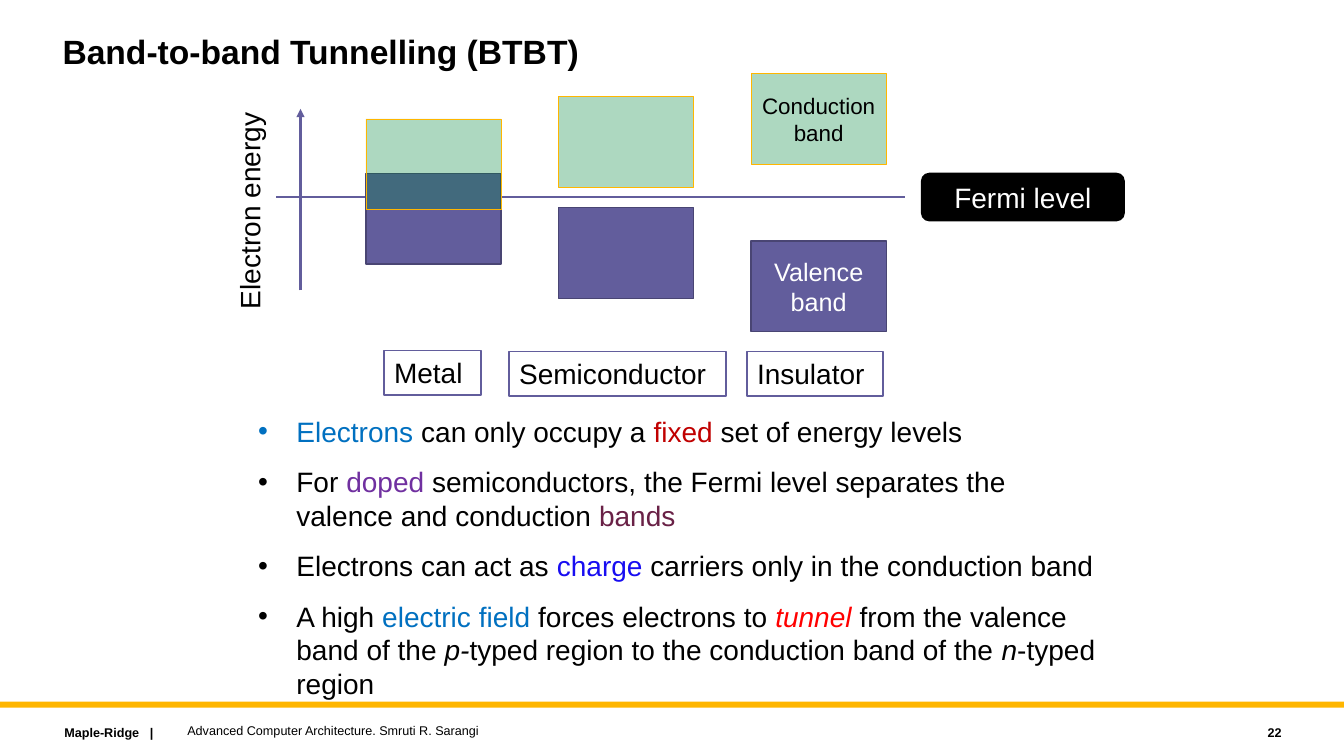
"""Build the slide on band-to-band tunnelling."""
import dataclasses

import pptx
import pptx.dml.color
import pptx.enum.shapes
import pptx.enum.text
import pptx.oxml
import pptx.oxml.ns
import pptx.util

Inches = pptx.util.Inches
Pt = pptx.util.Pt
Shape = pptx.enum.shapes.MSO_SHAPE
Align = pptx.enum.text.PP_ALIGN
Anchor = pptx.enum.text.MSO_ANCHOR
Fit = pptx.enum.text.MSO_AUTO_SIZE


@dataclasses.dataclass(frozen=True)
class Theme:
    font: str = "Arial"
    black: str = "000000"
    white: str = "FFFFFF"
    gold: str = "FFB600"
    violet: str = "625D9C"
    edge: str = "494573"
    green: str = "00863D"
    blue: str = "0070C0"
    crimson: str = "C00000"
    purple: str = "7030A0"
    plum: str = "692146"
    royal: str = "180DF1"
    red: str = "FF0000"
    head: int = 24
    main: int = 20
    band: int = 18
    small: int = 16
    foot: int = 9


def color(code):
    return pptx.dml.color.RGBColor.from_string(code)


def node(tag, **attrs):
    item = pptx.oxml.parse_xml(f"<a:{tag} {pptx.oxml.ns.nsdecls('a')}/>")
    for key, value in attrs.items():
        item.set(key, value)
    return item


class Deck:
    def __init__(self, theme):
        self.theme = theme
        self.file = pptx.Presentation()
        self.file.slide_width = Inches(13.33)
        self.file.slide_height = Inches(7.5)
        self.slide = self.file.slides.add_slide(self.file.slide_layouts[1])

    def place(self, item, area):
        item.left, item.top, item.width, item.height = map(Inches, area)

    def style(self, run, size, tint=None, bold=False, slant=False):
        font = run.font
        font.name, font.size = self.theme.font, Pt(size)
        font.bold, font.italic = bold, slant
        font.color.rgb = color(tint or self.theme.black)

    def letter(self, item, text, size, tint=None, bold=False, align=Align.LEFT,
               anchor=Anchor.TOP, wrap=True, fit=Fit.NONE):
        frame = item.text_frame
        frame.text = text
        frame.word_wrap, frame.auto_size = wrap, fit
        frame.vertical_anchor = anchor
        for para in frame.paragraphs:
            para.alignment = align
            for run in para.runs:
                self.style(run, size, tint, bold)

    def title(self, text, area):
        item = self.slide.shapes.title
        self.place(item, area)
        self.letter(item, text, self.theme.head, bold=True)
        item.text_frame.paragraphs[0].line_spacing = 0.9

    def bullets(self, rows, area):
        item = self.slide.placeholders[1]
        self.place(item, area)
        frame = item.text_frame
        frame.word_wrap, frame.auto_size = True, Fit.NONE
        frame.vertical_anchor = Anchor.TOP
        for index, row in enumerate(rows):
            para = frame.add_paragraph() if index else frame.paragraphs[0]
            props = para._p.get_or_add_pPr()
            props.set("marL", str(Inches(0.38)))
            props.set("indent", str(-Inches(0.38)))
            props.append(node("buFont", typeface=self.theme.font))
            props.append(node("buChar", char="•"))
            para.space_before = Pt(12 if index else 0)
            for text, tint, slant in row:
                run = para.add_run()
                run.text = text
                self.style(run, self.theme.main, tint, slant=slant)

    def label(self, text, area, size, turn=0, **look):
        item = self.slide.shapes.add_textbox(*map(Inches, area))
        self.letter(item, text, size, **look)
        item.rotation = turn

    def box(self, area, fill, edge=None, width=1, kind=Shape.RECTANGLE, alpha=None):
        item = self.slide.shapes.add_shape(kind, *map(Inches, area))
        item.shadow.inherit = False
        item.fill.solid()
        item.fill.fore_color.rgb = color(fill)
        if alpha:
            tone = item._element.spPr.find(".//" + pptx.oxml.ns.qn("a:srgbClr"))
            tone.append(node("alpha", val=str(alpha * 1000)))
        if edge:
            item.line.color.rgb = color(edge)
            item.line.width = Pt(width)
        else:
            item.line.fill.background()
        return item

    def line(self, start, end, arrow=False):
        ends = map(Inches, (*start, *end))
        item = self.slide.shapes.add_connector(
            pptx.enum.shapes.MSO_CONNECTOR.STRAIGHT, *ends)
        item.line.color.rgb = color(self.theme.violet)
        item.line.width = Pt(1.5)
        if arrow:
            stroke = item._element.spPr.find(pptx.oxml.ns.qn("a:ln"))
            stroke.append(node("tailEnd", type="triangle"))
        item._element.spPr.append(node("effectLst"))


def main():
    theme = Theme()
    deck = Deck(theme)

    deck.title("Band-to-band Tunnelling (BTBT)", (0.52, 0.3, 10, 0.9))
    plain = theme.black
    deck.bullets([
        [("Electrons", theme.blue, False), (" can only occupy a ", plain, False),
         ("fixed", theme.crimson, False), (" set of energy levels", plain, False)],
        [("For ", plain, False), ("doped", theme.purple, False),
         (" semiconductors, the Fermi level separates the valence and conduction ",
          plain, False), ("bands", theme.plum, False)],
        [("Electrons can act as ", plain, False), ("charge", theme.royal, False),
         (" carriers only in the conduction band", plain, False)],
        [("A high ", plain, False), ("electric field ", theme.blue, False),
         ("forces electrons to ", plain, False), ("tunnel ", theme.red, True),
         ("from the valence band of the ", plain, False), ("p-", plain, True),
         ("typed region to the conduction band of the ", plain, False),
         ("n", plain, True), ("-typed region", plain, False)],
    ], (2.46, 4.06, 8.51, 2.92))

    deck.box((0, 6.96, 13.33, 0.06), theme.gold)
    deck.label("Maple-Ridge   |", (0.54, 7.14, 2.27, 0.25), theme.foot, bold=True)
    deck.label("Advanced Computer Architecture. Smruti R. Sarangi",
               (1.76, 7.12, 8, 0.25), theme.foot, anchor=Anchor.MIDDLE)
    deck.label("22", (11.41, 7.14, 1.4, 0.25), theme.foot, bold=True,
               align=Align.RIGHT, anchor=Anchor.MIDDLE)

    deck.line((2.98, 2.88), (2.98, 1.08), arrow=True)
    deck.line((2.74, 1.95), (8.98, 1.95))
    mid = {"align": Align.CENTER, "anchor": Anchor.MIDDLE}
    fermi = deck.box((9.14, 1.72, 2.01, 0.47), theme.black, theme.black,
                     kind=Shape.ROUNDED_RECTANGLE)
    deck.letter(fermi, "Fermi level", theme.main, theme.white, **mid)

    lefts = [3.63 + 1.91 * step for step in range(3)]
    for left, top in zip(lefts, (1.72, 2.06, 2.39)):
        valence = deck.box((left, top, 1.34, 0.9), theme.violet, theme.edge)
    deck.letter(valence, "Valence band", theme.band, theme.white, **mid)
    for left, top in zip(lefts, (1.18, 0.96, 0.73)):
        conduct = deck.box((left, top, 1.34, 0.9), theme.green, theme.gold, 0.5,
                           alpha=32)
    deck.letter(conduct, "Conduction band", theme.small, **mid)

    grow = {"wrap": False, "fit": Fit.SHAPE_TO_FIT_TEXT}
    deck.label("Electron energy", (1.39, 1.86, 2.17, 0.44), theme.main, turn=270,
               **grow)
    for name, left, top, width in (("Metal", 3.81, 3.48, 0.96),
                                   ("Semiconductor", 5.05, 3.49, 2.15),
                                   ("Insulator", 7.41, 3.49, 1.35)):
        tag = deck.box((left, top, width, 0.44), theme.white, theme.violet)
        deck.letter(tag, name, theme.main, **grow)

    deck.file.save("out.pptx")


if __name__ == "__main__":
    main()
